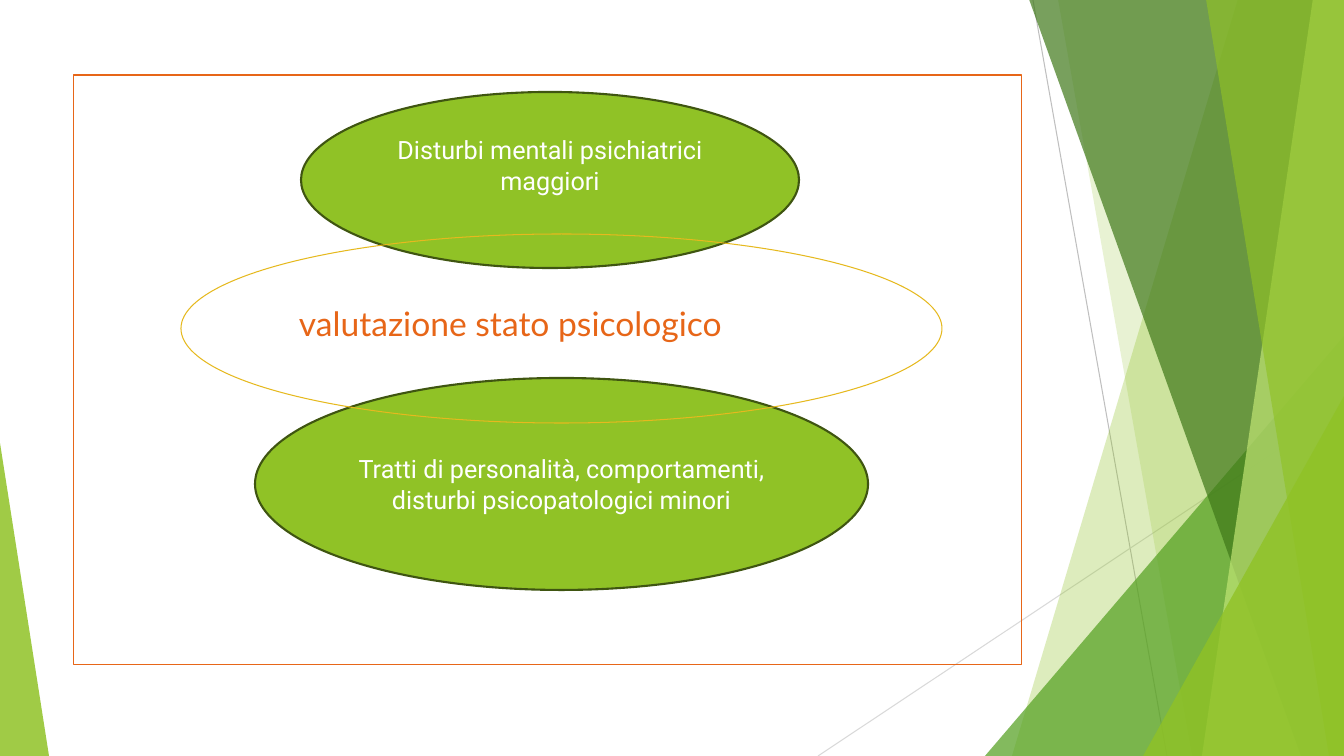
from lxml.etree import SubElement
from pptx import Presentation
from pptx.dml.color import RGBColor
from pptx.enum.shapes import MSO_CONNECTOR, MSO_SHAPE
from pptx.enum.text import MSO_ANCHOR, PP_ALIGN
from pptx.oxml.ns import qn
from pptx.util import Emu, Pt

W, H = 1344, 756
SCALE = 12192000 / W

LIME = RGBColor(0x90, 0xC2, 0x26)
GREEN = RGBColor(0x54, 0xA0, 0x21)
FOREST = RGBColor(0x3F, 0x78, 0x19)
PALE = RGBColor(0xC0, 0xE4, 0x74)
OLIVE = RGBColor(0x3F, 0x55, 0x11)
ORANGE = RGBColor(0xE7, 0x66, 0x18)
GOLD = RGBColor(0xE6, 0xB9, 0x1E)
GREY = RGBColor(0xBF, 0xBF, 0xBF)
LIGHT_GREY = RGBColor(0xD9, 0xD9, 0xD9)
WHITE = RGBColor(0xFF, 0xFF, 0xFF)


def px(n):
    return Emu(round(n * SCALE))


def paint(sp, fill=None, alpha=100, line=None, width=0.75):
    sp.shadow.inherit = False
    if fill is None:
        sp.fill.background()
    else:
        sp.fill.solid()
        sp.fill.fore_color.rgb = fill
        if alpha < 100:
            clr = sp.fill._xPr.find(qn("a:solidFill"))[0]
            SubElement(clr, qn("a:alpha"), val=str(alpha * 1000))
    if line is None:
        sp.line.fill.background()
    else:
        sp.line.color.rgb = line
        sp.line.width = Pt(width)


def add_preset(s, kind, box, **style):
    sp = s.shapes.add_shape(kind, *map(px, box))
    paint(sp, **style)
    return sp


def add_triangle(s, box, apex, fill, alpha):
    sp = add_preset(s, MSO_SHAPE.ISOSCELES_TRIANGLE, box, fill=fill, alpha=alpha)
    sp.adjustments[0] = apex


def add_band(s, top, bottom, fill, alpha):
    """Band from a slanted left edge to the right side of the slide."""
    fb = s.shapes.build_freeform(top, -1, scale=SCALE)
    fb.add_line_segments([(W, -1), (W, H), (bottom, H)], close=True)
    paint(fb.convert_to_shape(), fill=fill, alpha=alpha)


def add_line(s, start, end, color):
    c = s.shapes.add_connector(MSO_CONNECTOR.STRAIGHT, *map(px, start + end))
    c.line.color.rgb = color
    c.line.width = Pt(0.75)
    SubElement(c._element.spPr, qn("a:effectLst"))


def add_text(sp, text, font, size, color, align):
    tf = sp.text_frame
    tf.word_wrap = True
    p = tf.paragraphs[0]
    p.alignment = align
    r = p.add_run()
    r.text = text
    r.font.name = font
    r.font.size = Pt(size)
    r.font.color.rgb = color
    return tf


def add_topic(s, box, text):
    sp = add_preset(s, MSO_SHAPE.OVAL, box, fill=LIME, line=OLIVE, width=1.5)
    tf = add_text(sp, text, "Roboto", 18, WHITE, PP_ALIGN.CENTER)
    tf.vertical_anchor = MSO_ANCHOR.MIDDLE
    return tf


def add_backdrop(s):
    add_line(s, (1033, 0), (1167, H), GREY)
    add_line(s, (W, 406), (818, H), LIGHT_GREY)
    add_band(s, 1238, 1012, LIME, 30)
    add_band(s, 1058, 1192, LIME, 20)
    add_triangle(s, (985, 336, 359, 420), 1, GREEN, 72)
    add_band(s, 1029, 1301, FOREST, 70)
    add_band(s, 1313, 1202, PALE, 70)
    add_band(s, 1206, 1329, LIME, 65)
    add_triangle(s, (1143, 396, 201, 360), 1, LIME, 80)
    add_triangle(s, (0, 443, 49, 313), 0, LIME, 85)


def main():
    prs = Presentation()
    prs.slide_width, prs.slide_height = px(W), px(H)
    s = prs.slides.add_slide(prs.slide_layouts[6])

    # Green facets
    add_backdrop(s)

    # Frame with the central label
    frame = add_preset(s, MSO_SHAPE.RECTANGLE, (74, 75, 948, 590), line=ORANGE)
    tf = add_text(frame, "valutazione stato psicologico", "Lato", 24, ORANGE, PP_ALIGN.LEFT)
    tf.vertical_anchor = MSO_ANCHOR.TOP
    tf.margin_left, tf.margin_top = px(225), px(228)

    # Two topics and the oval that overlaps both
    tf = add_topic(s, (301, 92, 498, 176), "Disturbi mentali psichiatrici maggiori")
    tf.margin_bottom = px(35)
    add_topic(s, (255, 378, 613, 212),
              "Tratti di personalità, comportamenti, disturbi psicopatologici minori")
    add_preset(s, MSO_SHAPE.OVAL, (181, 234, 761, 189), line=GOLD)

    prs.save("out.pptx")


if __name__ == "__main__":
    main()
